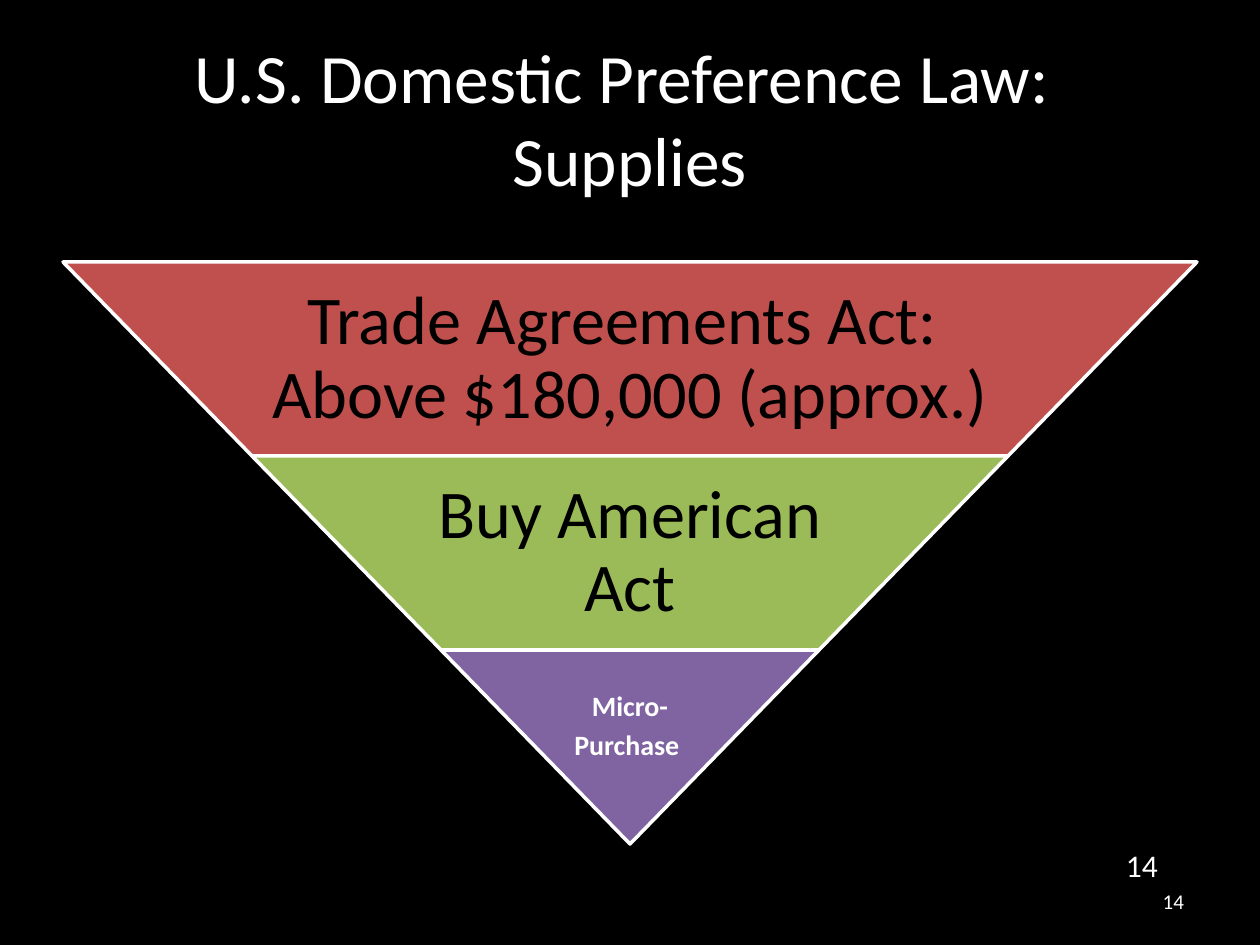
from pptx import Presentation
from pptx.dml.color import RGBColor
from pptx.enum.shapes import MSO_SHAPE
from pptx.enum.text import MSO_ANCHOR, MSO_AUTO_SIZE, PP_ALIGN
from pptx.util import Emu, Pt

SLIDE_WIDTH, SLIDE_HEIGHT = 1260, 945
BLACK, WHITE = "000000", "FFFFFF"


def px(length):
    return Emu(round(length * 914400 / 126))


def color(hex_code):
    return RGBColor.from_string(hex_code)


def place(shape, left, top, width, height):
    shape.left, shape.top = px(left), px(top)
    shape.width, shape.height = px(width), px(height)


def write(shape, text, size, ink=WHITE, bold=False, align=PP_ALIGN.CENTER,
          anchor=MSO_ANCHOR.MIDDLE, insets=(13, 6, 13, 6), line_spacing=None, gap=0):
    """Fill a shape with one paragraph per line; a vertical tab breaks a line."""
    frame = shape.text_frame
    frame.word_wrap = True
    frame.auto_size = MSO_AUTO_SIZE.NONE
    frame.vertical_anchor = anchor
    frame.margin_left, frame.margin_top, frame.margin_right, frame.margin_bottom = map(px, insets)
    frame.text = text
    for para in frame.paragraphs:
        para.alignment = align
        para.space_before, para.space_after = Pt(0), Pt(gap)
        para.line_spacing = line_spacing
        for span in para.runs:
            span.font.name = "Calibri"
            span.font.size = Pt(size)
            span.font.bold = bold
            span.font.color.rgb = color(ink)


def add_text(page, box, text, size, **text_format):
    shape = page.shapes.add_textbox(*map(px, box))
    write(shape, text, size, **text_format)


def add_title(page, box, text):
    title = page.shapes.title
    place(title, *box)
    write(title, text, 39.6)


def add_inverted_pyramid(page, box, tiers):
    """Stack equal tiers that narrow evenly to a point at the bottom."""
    left, top, width, height = box
    tier_height = height / len(tiers)
    inset = width / len(tiers) / 2
    for index, (text, fill, text_width, text_format) in enumerate(tiers):
        tier_top = top + index * tier_height
        tier_width = width - 2 * index * inset
        tier = page.shapes.add_shape(
            MSO_SHAPE.TRAPEZOID, px(left + index * inset), px(tier_top),
            px(tier_width), px(tier_height))
        tier.adjustments[0] = inset / tier_height
        tier.rotation = 180
        tier.shadow.inherit = False
        tier.fill.solid()
        tier.fill.fore_color.rgb = color(fill)
        tier.line.color.rgb = color(WHITE)
        tier.line.width = Pt(2)
        # The label stays upright in its own box
        label_box = (left + (width - text_width) / 2, tier_top, text_width, tier_height)
        add_text(page, label_box, text, line_spacing=0.9, **text_format)


def main():
    deck = Presentation()
    deck.slide_width, deck.slide_height = px(SLIDE_WIDTH), px(SLIDE_HEIGHT)
    page = deck.slides.add_slide(deck.slide_layouts[5])
    page.background.fill.solid()
    page.background.fill.fore_color.rgb = color(BLACK)

    # Title
    add_title(page, (63, 38, 1134, 158), "U.S. Domestic Preference Law: \vSupplies")

    # Pyramid of laws, widest threshold first
    large = {"size": 39, "ink": BLACK, "insets": (6, 6, 6, 6)}
    small = {"size": 16, "bold": True, "insets": (3, 3, 3, 43), "gap": 5.5}
    add_inverted_pyramid(page, (63, 262, 1134, 582), [
        ("Trade Agreements Act: \vAbove $180,000 (approx.)", "C0504D", 737, large),
        ("Buy American Act", "9BBB59", 491, large),
        ("Micro-\nPurchase ", "8064A2", 378, small),
    ])

    # Page numbers
    add_text(page, (1113, 840, 126, 50), "14", 18,
             align=PP_ALIGN.LEFT, anchor=MSO_ANCHOR.TOP)
    add_text(page, (903, 876, 294, 50), "14", 12, align=PP_ALIGN.RIGHT)

    deck.save("out.pptx")


if __name__ == "__main__":
    main()
